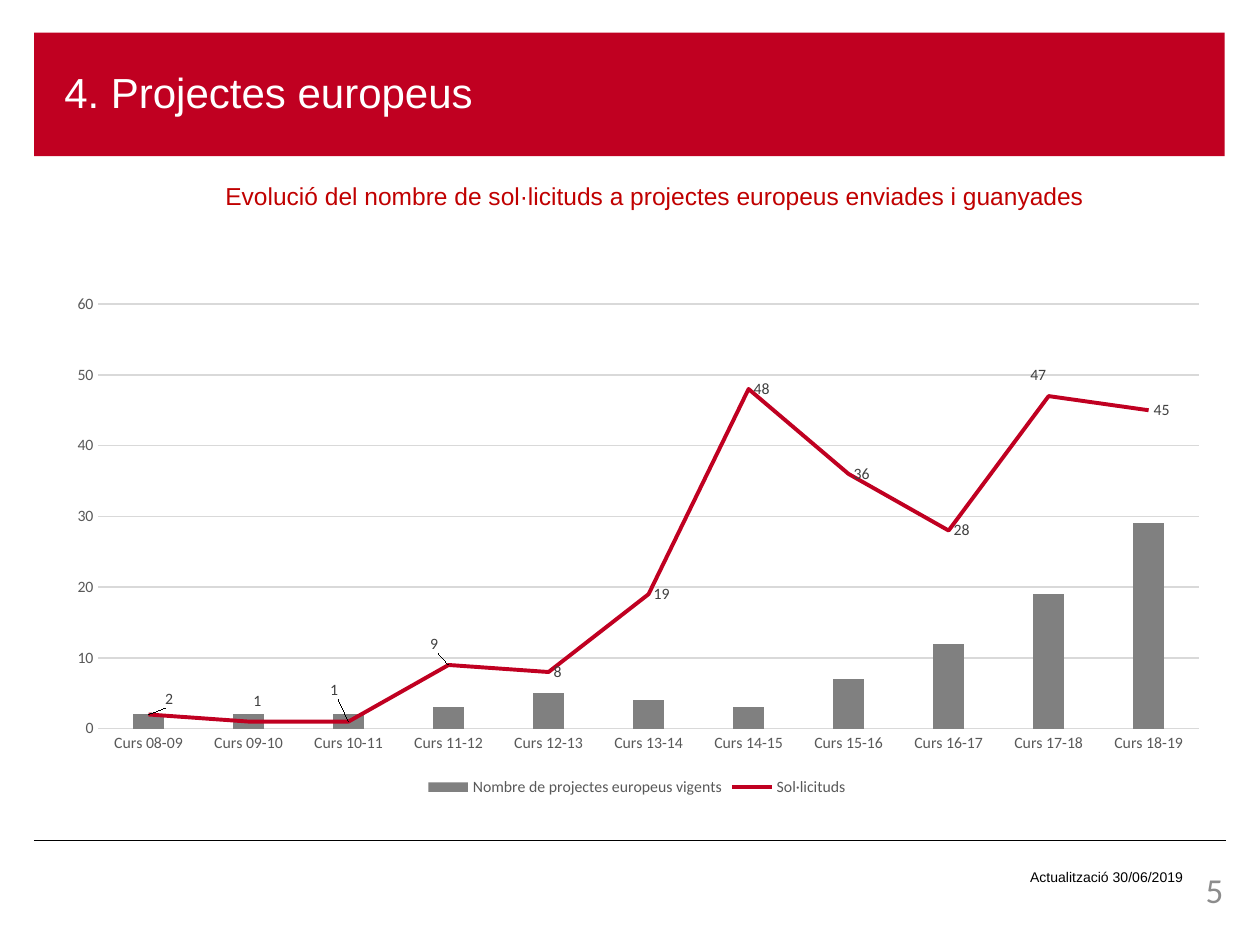
from pptx import Presentation
from pptx.chart.data import CategoryChartData
from pptx.dml.color import RGBColor
from pptx.enum.chart import XL_CHART_TYPE, XL_LABEL_POSITION, XL_LEGEND_POSITION, XL_MARKER_STYLE, XL_TICK_MARK
from pptx.enum.shapes import MSO_CONNECTOR, MSO_SHAPE
from pptx.enum.text import MSO_ANCHOR, PP_ALIGN
from pptx.oxml import parse_xml
from pptx.oxml.ns import nsdecls, qn
from pptx.util import Inches, Pt
from lxml.etree import SubElement

RED = RGBColor(0xC0, 0x00, 0x21)
DARK_RED = RGBColor(0xC0, 0x00, 0x00)
WHITE = RGBColor(0xFF, 0xFF, 0xFF)
BLACK = RGBColor(0x00, 0x00, 0x00)
BAR_GRAY = RGBColor(0x80, 0x80, 0x80)
PAGE_GRAY = RGBColor(0x8C, 0x8C, 0x8C)
AXIS_GRAY = RGBColor(0x59, 0x59, 0x59)
LABEL_GRAY = RGBColor(0x40, 0x40, 0x40)
GRID_GRAY = RGBColor(0xD9, 0xD9, 0xD9)


def style_font(font, size, color, name="Calibri"):
    font.size = Pt(size)
    font.name = name
    font.color.rgb = color


def manual_layout(x, y, extra=""):
    return parse_xml(
        f'<c:layout {nsdecls("c")}><c:manualLayout>{extra}'
        f'<c:x val="{x}"/><c:y val="{y}"/></c:manualLayout></c:layout>'
    )


deck = Presentation()
deck.slide_width = Inches(10)
deck.slide_height = Inches(7.5)
page = deck.slides.add_slide(deck.slide_layouts[6])

rule = page.shapes.add_connector(
    MSO_CONNECTOR.STRAIGHT, Inches(0.27), Inches(6.67), Inches(9.73), Inches(6.67)
)
rule.line.color.rgb = BLACK
rule.line.width = Pt(0.5)
SubElement(rule._element.spPr, qn("a:effectLst"))

banner = page.shapes.add_shape(
    MSO_SHAPE.RECTANGLE, Inches(0.27), Inches(0.26), Inches(9.45), Inches(0.98)
)
banner.shadow.inherit = False
banner.fill.solid()
banner.fill.fore_color.rgb = RED
banner.line.fill.background()
banner.text_frame.margin_left = Inches(0.24)
banner.text_frame.vertical_anchor = MSO_ANCHOR.MIDDLE
banner.text_frame.word_wrap = True
title = banner.text_frame.paragraphs[0]
title.text = "4. Projectes europeus"
title.alignment = PP_ALIGN.LEFT
title.line_spacing = 0.9
style_font(title.font, 24, WHITE, "Arial")

texts = [
    ("Evolució del nombre de sol·licituds a projectes europeus enviades i guanyades",
     1.69, 1.39, 7.31, 0.34, 14, DARK_RED, "Arial", PP_ALIGN.LEFT, 0.1, 0.05),
    ("Actualització 30/06/2019",
     7.52, 6.84, 1.97, 0.24, 8, BLACK, "Arial", PP_ALIGN.RIGHT, 0.1, 0.05),
    ("5", 8.98, 6.89, 0.73, 0.4, 20, PAGE_GRAY, "Calibri", PP_ALIGN.RIGHT, 0, 0),
]
for text, left, top, width, height, size, color, name, alignment, side, edge in texts:
    box = page.shapes.add_textbox(Inches(left), Inches(top), Inches(width), Inches(height))
    frame = box.text_frame
    frame.word_wrap = True
    frame.margin_left = frame.margin_right = Inches(side)
    frame.margin_top = frame.margin_bottom = Inches(edge)
    para = frame.paragraphs[0]
    para.text = text
    para.alignment = alignment
    style_font(para.font, size, color, name)

data = CategoryChartData()
data.categories = [f"Curs {year:02}-{year + 1:02}" for year in range(8, 19)]
data.add_series("Nombre de projectes europeus vigents", [2, 2, 2, 3, 5, 4, 3, 7, 12, 19, 29])
data.add_series("Sol·licituds", [2, 1, 1, 9, 8, 19, 48, 36, 28, 47, 45])
chart = page.shapes.add_chart(
    XL_CHART_TYPE.COLUMN_CLUSTERED, Inches(0.41), Inches(2.25), Inches(9.29), Inches(4.11), data
).chart
style_font(chart.font, 10, BLACK)
chart.has_title = False
chart.has_legend = True
chart.legend.position = XL_LEGEND_POSITION.BOTTOM
chart.legend.include_in_layout = False
style_font(chart.legend.font, 9, AXIS_GRAY)

for axis in (chart.category_axis, chart.value_axis):
    axis.major_tick_mark = axis.minor_tick_mark = XL_TICK_MARK.NONE
    style_font(axis.tick_labels.font, 9, AXIS_GRAY)
values = chart.value_axis
values.minimum_scale, values.maximum_scale, values.major_unit = 0, 60, 10
values.format.line.fill.background()
values.has_major_gridlines = True
for line in (chart.category_axis.format.line, values.major_gridlines.format.line):
    line.color.rgb = GRID_GRAY
    line.width = Pt(0.75)

bars = chart.plots[0]
bars.vary_by_categories = False
bars.gap_width = 219
bars.overlap = -27
bars.series[0].format.fill.solid()
bars.series[0].format.fill.fore_color.rgb = BAR_GRAY

bar_chart = chart._chartSpace.find(".//" + qn("c:barChart"))
line_chart = parse_xml(
    f'<c:lineChart {nsdecls("c")}><c:grouping val="standard"/><c:varyColors val="0"/></c:lineChart>'
)
requests_series = bar_chart.findall(qn("c:ser"))[1]
for flag in requests_series.findall(qn("c:invertIfNegative")):
    requests_series.remove(flag)
line_chart.append(requests_series)
SubElement(line_chart, qn("c:marker")).set("val", "1")
for axis_id in bar_chart.findall(qn("c:axId")):
    SubElement(line_chart, qn("c:axId")).set("val", axis_id.get("val"))
bar_chart.addnext(line_chart)

plot_area = bar_chart.getparent()
for layout in plot_area.findall(qn("c:layout")):
    plot_area.remove(layout)
plot_layout = manual_layout(
    0.04, 0.04,
    '<c:layoutTarget val="inner"/><c:xMode val="edge"/><c:yMode val="edge"/>',
)
for tag, share in (("c:w", "0.94"), ("c:h", "0.82")):
    SubElement(plot_layout[0], qn(tag)).set("val", share)
plot_area.insert(0, plot_layout)

requests = chart.plots[1].series[0]
requests.smooth = False
requests.marker.style = XL_MARKER_STYLE.NONE
requests.format.line.color.rgb = RED
requests.format.line.width = Pt(2.25)
labels = requests.data_labels
labels.show_value = True
labels.position = XL_LABEL_POSITION.RIGHT
style_font(labels.font, 9, LABEL_GRAY)

label_shifts = {
    0: (0.01, -0.03),
    1: (0, -0.04),
    2: (-0.02, -0.06),
    3: (-0.02, -0.04),
    9: (-0.02, -0.04),
}
for index, (x, y) in label_shifts.items():
    label = requests.points[index].data_label
    label.position = XL_LABEL_POSITION.RIGHT
    style_font(label.font, 9, LABEL_GRAY)
for element in requests_series.iter(qn("c:dLbl")):
    index = int(element.find(qn("c:idx")).get("val"))
    element.insert(1, manual_layout(*label_shifts[index]))

deck.save("out.pptx")
